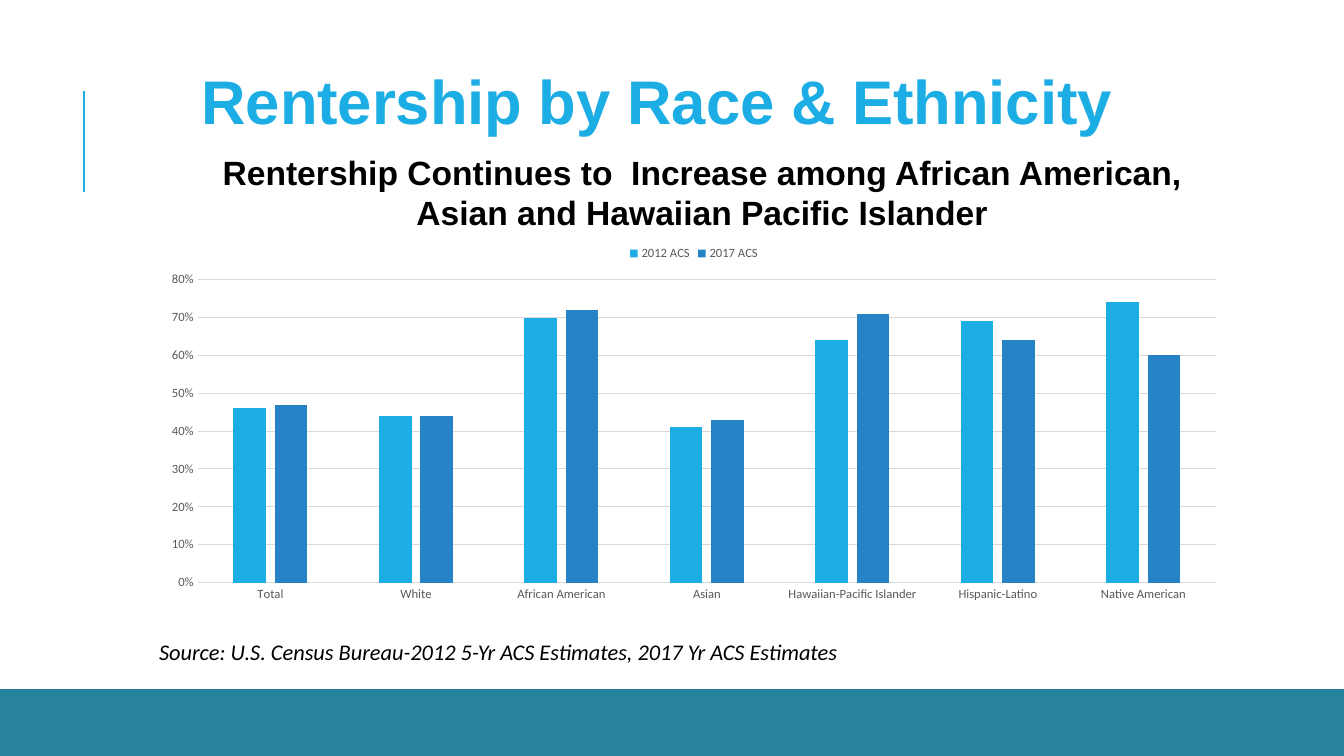
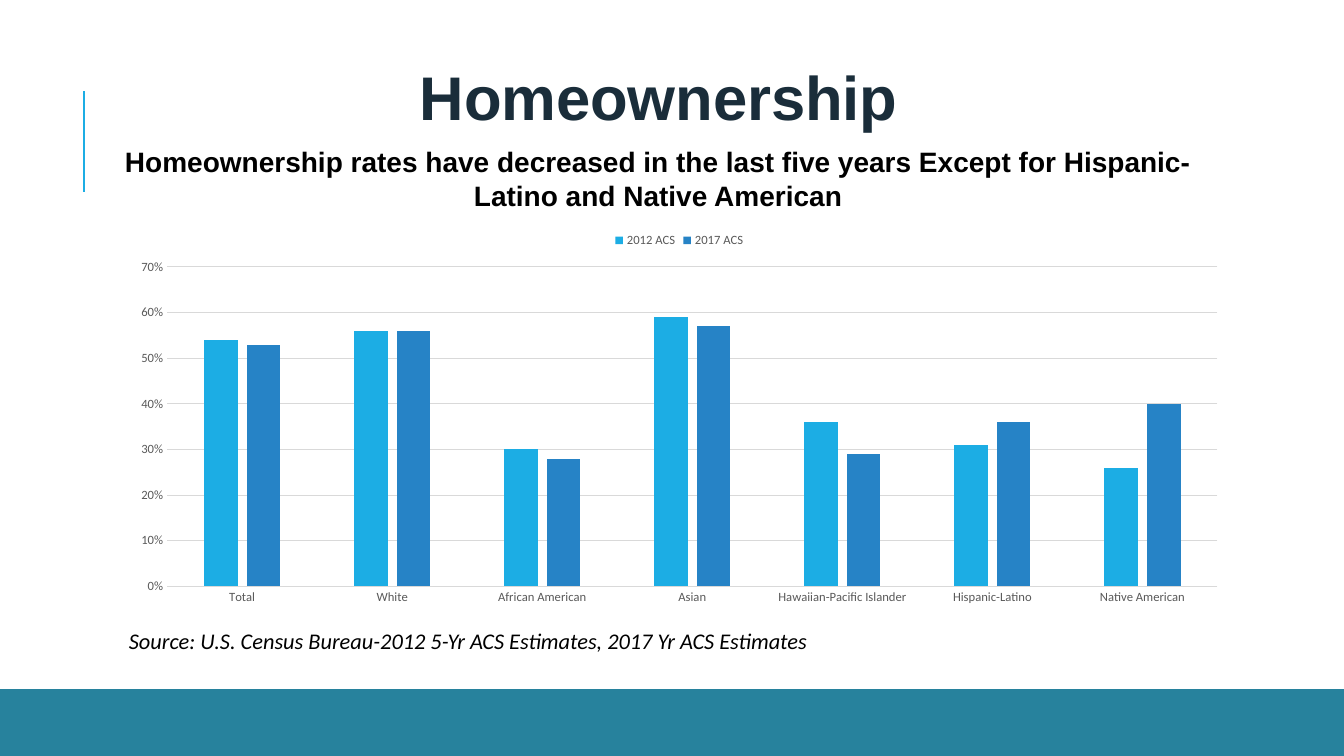
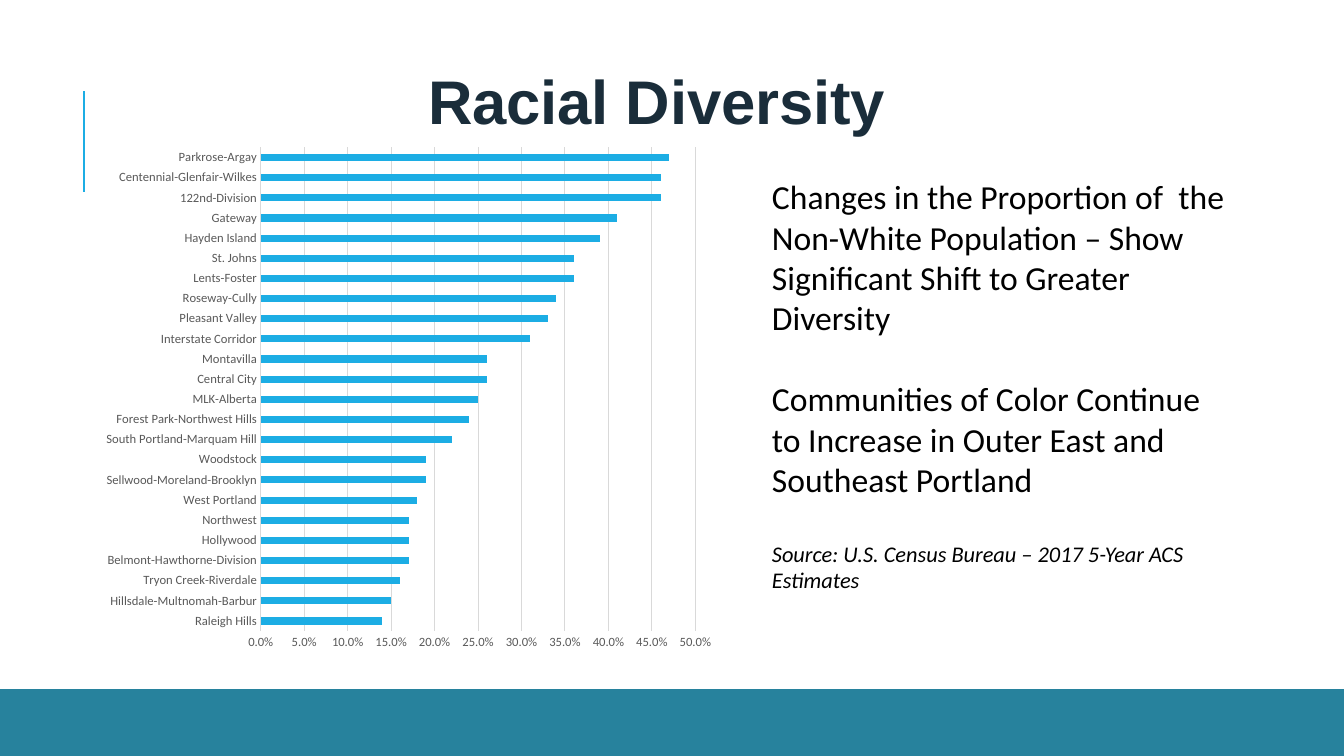
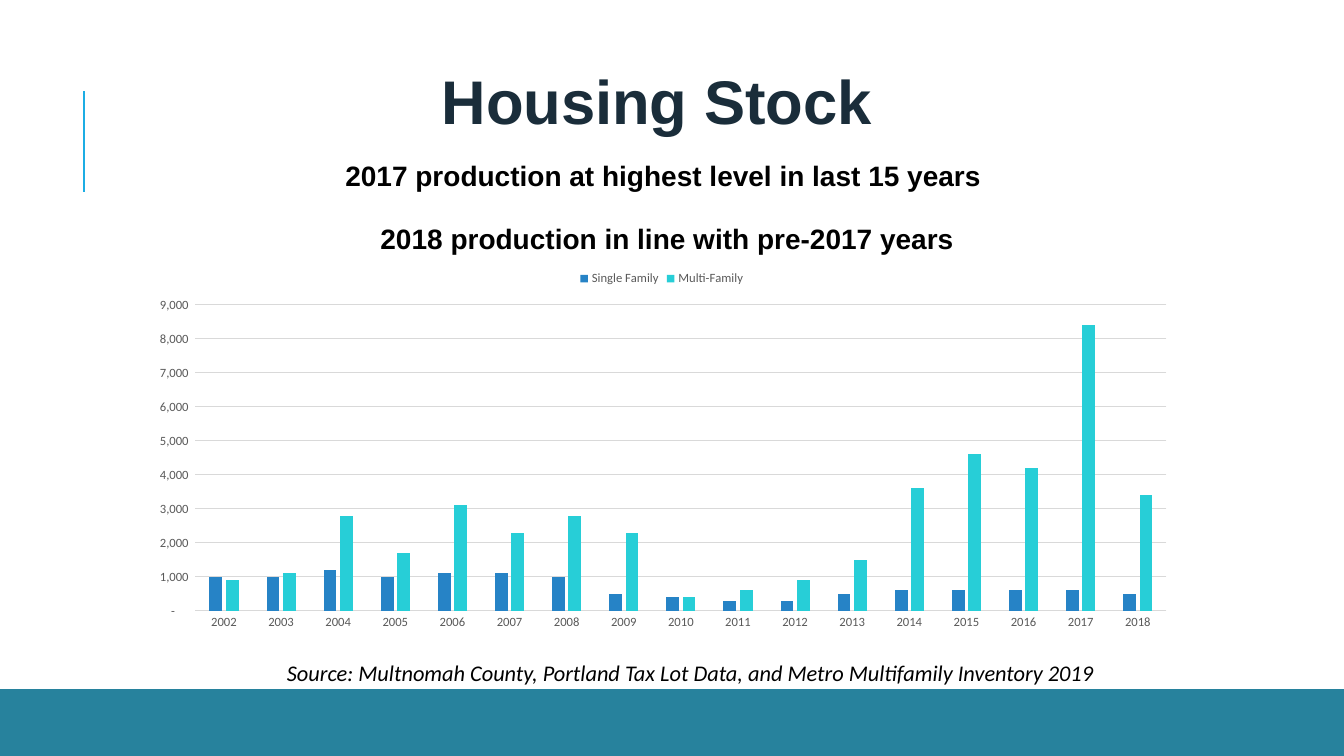
from dataclasses import dataclass

from lxml import etree
from pptx import Presentation
from pptx.chart.data import CategoryChartData
from pptx.dml.color import RGBColor
from pptx.enum.chart import XL_CHART_TYPE, XL_LEGEND_POSITION, XL_TICK_MARK
from pptx.enum.shapes import MSO_CONNECTOR
from pptx.enum.text import MSO_ANCHOR, MSO_AUTO_SIZE, PP_ALIGN
from pptx.oxml.ns import qn
from pptx.util import Emu, Inches, Pt

COLUMN = XL_CHART_TYPE.COLUMN_CLUSTERED
BAR = XL_CHART_TYPE.BAR_CLUSTERED
LEGEND_TOP = XL_LEGEND_POSITION.TOP
NO_TICK = XL_TICK_MARK.NONE
STRAIGHT = MSO_CONNECTOR.STRAIGHT
TOP, MIDDLE = MSO_ANCHOR.TOP, MSO_ANCHOR.MIDDLE
GROW = MSO_AUTO_SIZE.SHAPE_TO_FIT_TEXT
LEFT, CENTER = PP_ALIGN.LEFT, PP_ALIGN.CENTER

SKY = RGBColor(0x1C, 0xAD, 0xE4)
BLUE = RGBColor(0x26, 0x83, 0xC6)
AQUA = RGBColor(0x27, 0xCE, 0xD7)
TEAL = RGBColor(0x27, 0x82, 0x9D)
NAVY = RGBColor(0x1A, 0x2D, 0x3A)
BLACK = RGBColor(0x00, 0x00, 0x00)
GRAY = RGBColor(0x59, 0x59, 0x59)
RULE = RGBColor(0xD9, 0xD9, 0xD9)

HEAD_FONT, BODY_FONT = "Arial", "Calibri"

# The grid has 80 columns and 45 rows of square cells.
COLS, ROWS = 80, 45
CELL = Inches(1 / 6)
BAND_TOP = 41.34

PERCENT = "0%"
TENTHS = "0.0%"
COUNT = r'_(* #,##0_);_(* \(#,##0\);_(* "-"??_);_(@_)'


def cells(n: float) -> Emu:
    return Emu(round(n * CELL))


@dataclass(frozen=True)
class Box:
    """A place on the grid, in columns and rows."""
    col: float
    row: float
    width: float
    height: float

    def emu(self) -> tuple[Emu, ...]:
        return tuple(cells(n) for n in (self.col, self.row, self.width, self.height))


@dataclass(frozen=True)
class Series:
    name: str
    color: RGBColor
    values: list[float]


@dataclass(frozen=True)
class Chart:
    box: Box
    categories: list[str]
    series: list[Series]
    top: float
    step: float
    fmt: str
    kind: XL_CHART_TYPE = COLUMN
    gap: int = 219
    overlap: int = -27
    legend: bool = True


@dataclass(frozen=True)
class Para:
    text: str
    size: float
    italic: bool = False
    after: float = 0


TITLE_BOX = Box(4.5, 3.66, 69.18, 4.5)
GROUPS = ["Total", "White", "African American", "Asian",
          "Hawaiian-Pacific Islander", "Hispanic-Latino", "Native American"]
DISTRICTS = {
    "Raleigh Hills": 0.14, "Hillsdale-Multnomah-Barbur": 0.15,
    "Tryon Creek-Riverdale": 0.16, "Belmont-Hawthorne-Division": 0.17,
    "Hollywood": 0.17, "Northwest": 0.17, "West Portland": 0.18,
    "Sellwood-Moreland-Brooklyn": 0.19, "Woodstock": 0.19,
    "South Portland-Marquam Hill": 0.22, "Forest Park-Northwest Hills": 0.24,
    "MLK-Alberta": 0.25, "Central City": 0.26, "Montavilla": 0.26,
    "Interstate Corridor": 0.31, "Pleasant Valley": 0.33, "Roseway-Cully": 0.34,
    "Lents-Foster": 0.36, "St. Johns": 0.36, "Hayden Island": 0.39,
    "Gateway": 0.41, "122nd-Division": 0.46,
    "Centennial-Glenfair-Wilkes": 0.46, "Parkrose-Argay": 0.47,
}
CENSUS = "Source: U.S. Census Bureau-2012 5-Yr ACS Estimates, 2017 Yr ACS Estimates"

RENTERSHIP = Chart(
    Box(8.94, 13.98, 64.74, 22.26), GROUPS,
    [Series("2012 ACS", SKY, [0.46, 0.44, 0.7, 0.41, 0.64, 0.69, 0.74]),
     Series("2017 ACS", BLUE, [0.47, 0.44, 0.72, 0.43, 0.71, 0.64, 0.6])],
    top=0.8, step=0.1, fmt=PERCENT)
HOMEOWNERSHIP = Chart(
    Box(7.08, 13.2, 66.72, 23.28), GROUPS,
    [Series("2012 ACS", SKY, [0.54, 0.56, 0.3, 0.59, 0.36, 0.31, 0.26]),
     Series("2017 ACS", BLUE, [0.53, 0.56, 0.28, 0.57, 0.29, 0.36, 0.4])],
    top=0.7, step=0.1, fmt=PERCENT)
DIVERSITY = Chart(
    Box(5.58, 8.16, 37.5, 31.14), list(DISTRICTS),
    [Series("Series 1", SKY, list(DISTRICTS.values()))],
    top=0.5, step=0.05, fmt=TENTHS, kind=BAR, gap=182, overlap=0, legend=False)
HOUSING = Chart(
    Box(8.1, 15.48, 62.58, 22.44), [str(year) for year in range(2002, 2019)],
    [Series("Single Family", BLUE,
            [1000, 1000, 1200, 1000, 1100, 1100, 1000, 500, 400,
             300, 300, 500, 600, 600, 600, 600, 500]),
     Series("Multi-Family", AQUA,
            [900, 1100, 2800, 1700, 3100, 2300, 2800, 2300, 400,
             600, 900, 1500, 3600, 4600, 4200, 8400, 3400])],
    top=9000, step=1000, fmt=COUNT)


def add_text(slide, box: Box, paras: list[Para], *, font: str = BODY_FONT,
             color: RGBColor = BLACK, bold: bool = False, align: PP_ALIGN = LEFT,
             anchor: MSO_ANCHOR = TOP, flush: bool = False, before: float = 0,
             line: float = 1, tracking: int = 0) -> None:
    """Add a text box; flush drops its margins, tracking is in 1/100 pt."""
    tf = slide.shapes.add_textbox(*box.emu()).text_frame
    tf.word_wrap = True
    tf.auto_size = GROW
    tf.vertical_anchor = anchor
    if flush:
        tf.margin_left = tf.margin_right = tf.margin_bottom = 0
        tf.margin_top = Pt(1)
    for i, para in enumerate(paras):
        p = tf.add_paragraph() if i else tf.paragraphs[0]
        p.alignment = align
        p.line_spacing = line
        p.space_before, p.space_after = Pt(before), Pt(para.after)
        r = p.add_run()
        r.text = para.text
        r.font.name, r.font.size = font, Pt(para.size)
        r.font.bold, r.font.italic = bold, para.italic
        r.font.color.rgb = color
        if tracking:
            r.font._element.set("spc", str(tracking))


def add_title(slide, text: str, color: RGBColor = NAVY, box: Box = TITLE_BOX) -> None:
    add_text(slide, box, [Para(text, 44)], font=HEAD_FONT, color=color, bold=True,
             align=CENTER, anchor=MIDDLE, flush=True, before=1, tracking=-10)


def add_subtitle(slide, box: Box, paras: list[Para], before: float = 6,
                 line: float = 1) -> None:
    add_text(slide, box, paras, font=HEAD_FONT, bold=True, align=CENTER,
             flush=True, before=before, line=line)


def add_source(slide, col: float, row: float, width: float, text: str,
               align: PP_ALIGN = LEFT) -> None:
    add_text(slide, Box(col, row, width, 2.22), [Para(text, 16, italic=True)],
             align=align)


def style_font(font, size: float, color: RGBColor) -> None:
    font.name, font.size = BODY_FONT, Pt(size)
    font.color.rgb = color


def style_line(line) -> None:
    line.color.rgb = RULE
    line.width = Pt(0.75)


def add_chart(slide, spec_chart: Chart) -> None:
    data = CategoryChartData(number_format=spec_chart.fmt)
    data.categories = spec_chart.categories
    for s in spec_chart.series:
        data.add_series(s.name, s.values)
    chart = slide.shapes.add_chart(spec_chart.kind, *spec_chart.box.emu(), data).chart
    chart.has_title = False
    style_font(chart.font, 10, BLACK)

    plot = chart.plots[0]
    plot.gap_width, plot.overlap = spec_chart.gap, spec_chart.overlap
    plot.vary_by_categories = False
    for bars, s in zip(plot.series, spec_chart.series):
        bars.invert_if_negative = False
        bars.format.fill.solid()
        bars.format.fill.fore_color.rgb = s.color

    cat, val = chart.category_axis, chart.value_axis
    for axis in (cat, val):
        axis.major_tick_mark = axis.minor_tick_mark = NO_TICK
        style_font(axis.tick_labels.font, 9, GRAY)
    cat.has_major_gridlines = False
    style_line(cat.format.line)
    val.has_major_gridlines = True
    style_line(val.major_gridlines.format.line)
    val.format.line.fill.background()
    val.minimum_scale, val.maximum_scale = 0, spec_chart.top
    val.major_unit = spec_chart.step
    val.tick_labels.number_format = spec_chart.fmt
    val.tick_labels.number_format_is_linked = False

    chart.has_legend = spec_chart.legend
    if spec_chart.legend:
        chart.legend.position = LEGEND_TOP
        chart.legend.include_in_layout = False
        style_font(chart.legend.font, 9, GRAY)


def new_slide(prs):
    """Add a blank slide with the accent line and the bottom band."""
    slide = prs.slides.add_slide(prs.slide_layouts[6])
    accent = slide.shapes.add_connector(STRAIGHT, cells(5), cells(11.4),
                                        cells(5), cells(5.4))
    accent.line.color.rgb = SKY
    accent.line.width = Pt(1.5)
    etree.SubElement(accent._element.spPr, qn("a:effectLst"))

    outline = slide.shapes.build_freeform(COLS, BAND_TOP, scale=CELL)
    outline.add_line_segments([(0.06, BAND_TOP), (0, ROWS), (COLS, ROWS)], close=True)
    band = outline.convert_to_shape()
    band.shadow.inherit = False
    band.fill.solid()
    band.fill.fore_color.rgb = TEAL
    band.line.fill.background()
    return slide


def rentership_slide(prs) -> None:
    slide = new_slide(prs)
    add_subtitle(slide, Box(12.54, 8.94, 58.5, 10.8), [
        Para("Rentership Continues to  Increase among African American, "
             "Asian and Hawaiian Pacific Islander", 24)])
    add_title(slide, "Rentership by Race & Ethnicity", SKY)
    add_chart(slide, RENTERSHIP)
    add_source(slide, 8.88, 37.68, 64.86, CENSUS)


def homeownership_slide(prs) -> None:
    slide = new_slide(prs)
    add_subtitle(slide, Box(7.08, 8.52, 64.2, 4.14), [
        Para("Homeownership rates have decreased in the last five years "
             "Except for Hispanic-Latino and Native American", 20)])
    add_title(slide, "Homeownership", box=Box(4.62, 3.42, 69.18, 4.5))
    add_chart(slide, HOMEOWNERSHIP)
    add_source(slide, 7.08, 37.02, 66.72, CENSUS)


def diversity_slide(prs) -> None:
    slide = new_slide(prs)
    add_title(slide, "Racial Diversity")
    add_text(slide, Box(45.36, 10.2, 28.32, 26.04), [
        Para("Changes in the Proportion of  the Non-White Population – "
             "Show Significant Shift to Greater Diversity", 24, after=29),
        Para("Communities of Color Continue to Increase in Outer East and "
             "Southeast Portland", 24, after=29),
        Para("Source: U.S. Census Bureau – 2017 5-Year ACS Estimates", 16, italic=True)])
    add_chart(slide, DIVERSITY)


def housing_slide(prs) -> None:
    slide = new_slide(prs)
    add_subtitle(slide, Box(1.68, 9.18, 76.08, 5.88), [
        Para("2017 production at highest level in last 15 years ", 20, after=18),
        Para("2018 production in line with pre-2017 years", 20, after=18)],
        before=0, line=1.1)
    add_title(slide, "Housing Stock")
    add_chart(slide, HOUSING)
    add_source(slide, 4.5, 38.94, 73.2,
               "Source: Multnomah County, Portland Tax Lot Data, "
               "and Metro Multifamily Inventory 2019", CENTER)


def main() -> None:
    prs = Presentation()
    prs.slide_width, prs.slide_height = cells(COLS), cells(ROWS)
    for build in (rentership_slide, homeownership_slide, diversity_slide, housing_slide):
        build(prs)
    prs.save("out.pptx")


if __name__ == "__main__":
    main()
